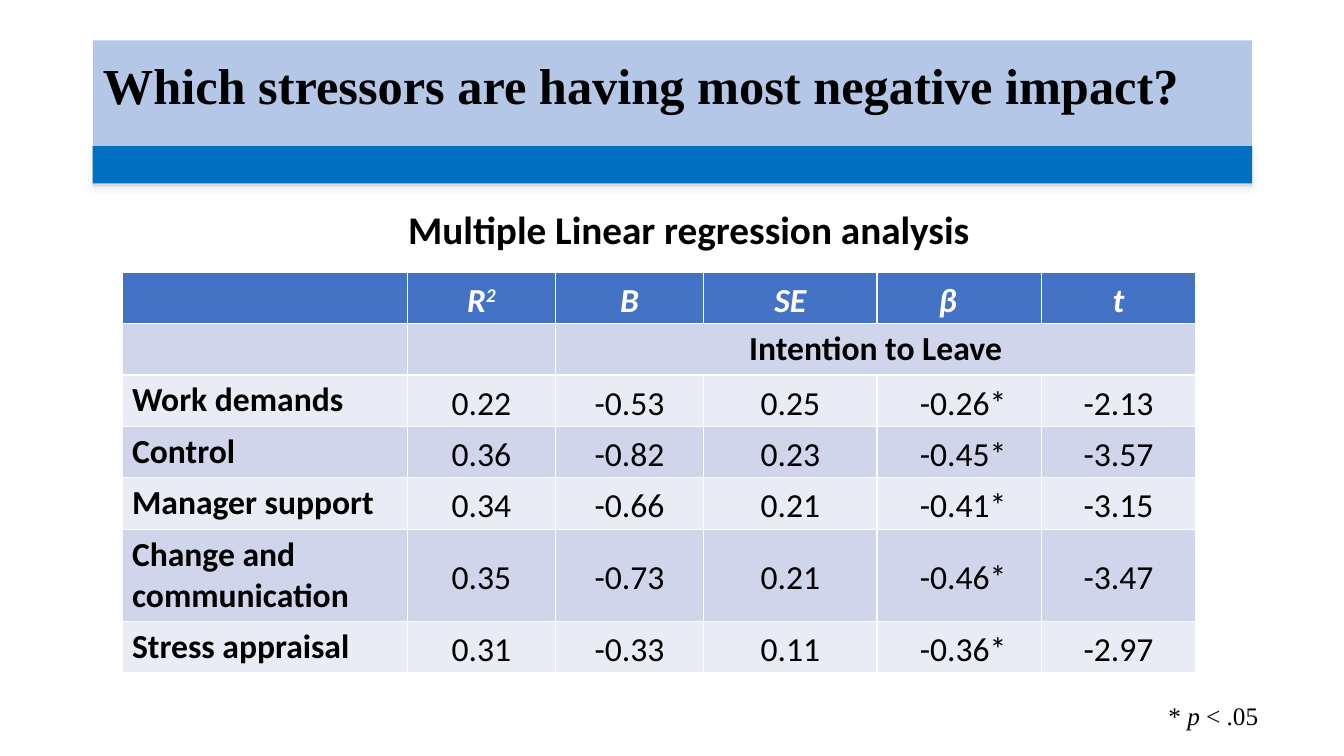
from lxml import etree
from pptx import Presentation, util as u
from pptx.dml.color import RGBColor
from pptx.enum import shapes, text
from pptx.oxml import ns

WIDTH, HEIGHT = 13.33, 7.5
COLUMNS = [2.83, 1.47, 1.47, 1.72, 1.63, 1.53]
ROWS = [0.51] * 5 + [0.9, 0.51]
HEADINGS = ["R2", "B", "SE", "β", "t"]
OUTCOME = "Intention to Leave"
RESULTS = [
    ("Work demands", "0.22", "-0.53", "0.25", " -0.26*", "-2.13"),
    ("Control", "0.36", "-0.82", "0.23", " -0.45*", "-3.57"),
    ("Manager support", "0.34", "-0.66", "0.21", " -0.41*", "-3.15"),
    ("Change and communication", "0.35", "-0.73", "0.21", " -0.46*", "-3.47"),
    ("Stress appraisal", "0.31", "-0.33", "0.11", " -0.36*", "-2.97"),
]


def color(value):
    """Turn a hex string into a colour."""
    return RGBColor.from_string(value)


def paint(shape, value):
    """Give a shape or cell a solid fill."""
    shape.fill.solid()
    shape.fill.fore_color.rgb = color(value)


def style(run, size, name="Calibri", value="000000", bold=None, italic=None):
    """Set the font of one run."""
    font = run.font
    font.size, font.name = u.Pt(size), name
    font.bold, font.italic = bold, italic
    font.color.rgb = color(value)


def add_runs(paragraph, pieces, **look):
    """Add text pieces that share one look to a paragraph."""
    for piece in pieces:
        run = paragraph.add_run()
        run.text = piece
        style(run, **look)


def add_shadow(shape):
    """Cast a soft pale shadow below a shape."""
    effects = etree.SubElement(shape._element.spPr, ns.qn("a:effectLst"))
    shadow = etree.SubElement(effects, ns.qn("a:outerShdw"), blurRad="63500",
                              dist="38100", dir="6360000", rotWithShape="0")
    tint = etree.SubElement(shadow, ns.qn("a:srgbClr"), val="E7E6E6")
    etree.SubElement(tint, ns.qn("a:alpha"), val="75000")


def add_banner(slide, left, top, width, height):
    """Place the title with a dark band over its lower quarter."""
    title = slide.shapes.title
    title.left, title.top = u.Inches(left), u.Inches(top)
    title.width, title.height = u.Inches(width), u.Inches(height)
    paint(title, "B4C7E7")
    frame = title.text_frame
    frame.text = "Which stressors are having most negative impact?"
    frame.auto_size = text.MSO_AUTO_SIZE.NONE
    frame.vertical_anchor = text.MSO_ANCHOR.TOP
    frame.margin_top = u.Inches(0.2)
    paragraph = frame.paragraphs[0]
    paragraph.alignment = text.PP_ALIGN.LEFT
    paragraph.line_spacing = 0.9
    style(paragraph.runs[0], 36, "Times New Roman", bold=True)

    band = slide.shapes.add_shape(
        shapes.MSO_SHAPE.RECTANGLE, u.Inches(left), u.Inches(top + 1.05),
        u.Inches(width), u.Inches(0.37))
    paint(band, "0070C0")
    band.line.fill.background()
    add_shadow(band)


def add_label(slide, left, top, width, height):
    """Add an empty wrapping text box and return its paragraph."""
    box = slide.shapes.add_textbox(u.Inches(left), u.Inches(top),
                                   u.Inches(width), u.Inches(height))
    box.text_frame.word_wrap = True
    return box.text_frame.paragraphs[0]


def fill_centered(cell, pieces, **look):
    """Write centred figures or a heading into a cell."""
    cell.vertical_anchor = text.MSO_ANCHOR.MIDDLE
    cell.margin_left = cell.margin_right = u.Inches(0.07)
    cell.margin_top = cell.margin_bottom = 0
    paragraph = cell.text_frame.paragraphs[0]
    paragraph.alignment = text.PP_ALIGN.CENTER
    paragraph.line_spacing = 1.15
    paragraph.space_before, paragraph.space_after = u.Pt(5), u.Pt(10)
    add_runs(paragraph, pieces, size=24, **look)


def add_regression_table(slide, left, top):
    """Place the table of regression results."""
    table = slide.shapes.add_table(
        len(ROWS), len(COLUMNS), u.Inches(left), u.Inches(top),
        u.Inches(sum(COLUMNS)), u.Inches(sum(ROWS))).table
    for column, width in zip(table.columns, COLUMNS):
        column.width = u.Inches(width)
    for index, (row, height) in enumerate(zip(table.rows, ROWS)):
        row.height = u.Inches(height)
        for cell in row.cells:
            paint(cell, "4472C4" if index == 0 else ("E9EBF5", "CFD5EA")[index % 2])

    for index, heading in enumerate(HEADINGS, 1):
        pieces = list(heading) if heading == "R2" else [heading]
        fill_centered(table.cell(0, index), pieces, value="FFFFFF", bold=True, italic=True)
    square = table.cell(0, 1).text_frame.paragraphs[0].runs[1]
    square.font._element.set("baseline", "30000")
    table.cell(0, HEADINGS.index("β") + 1).margin_right = u.Inches(0.3)

    outcome = table.cell(1, 2)
    outcome.merge(table.cell(1, len(COLUMNS) - 1))
    paragraph = outcome.text_frame.paragraphs[0]
    paragraph.alignment = text.PP_ALIGN.CENTER
    add_runs(paragraph, [OUTCOME], size=24, bold=True)

    for index, (stressor, *figures) in enumerate(RESULTS, 2):
        paragraph = table.cell(index, 0).text_frame.paragraphs[0]
        add_runs(paragraph, [stressor], size=24, bold=True)
        for column, figure in enumerate(figures, 1):
            fill_centered(table.cell(index, column), [figure], bold=False)


def add_footnote(slide, left, top, width, height):
    """Place the significance note."""
    paragraph = add_label(slide, left, top, width, height)
    add_runs(paragraph, ["* ", "p", " < .05"], size=18, name="Times New Roman")
    paragraph.runs[1].font.italic = True


def main():
    """Build and save the slide."""
    presentation = Presentation()
    presentation.slide_width = u.Inches(WIDTH)
    presentation.slide_height = u.Inches(HEIGHT)
    slide = presentation.slides.add_slide(presentation.slide_layouts[5])
    add_banner(slide, 0.92, 0.4, 11.5, 1.45)
    add_regression_table(slide, 1.21, 2.7)
    caption = add_label(slide, 3.95, 1.99, 8.15, 0.57)
    add_runs(caption, ["Multiple Linear regression analysis"], size=28, bold=True)
    add_footnote(slide, 11.49, 6.9, WIDTH - 11.49, 0.4)
    presentation.save("out.pptx")


if __name__ == "__main__":
    main()
